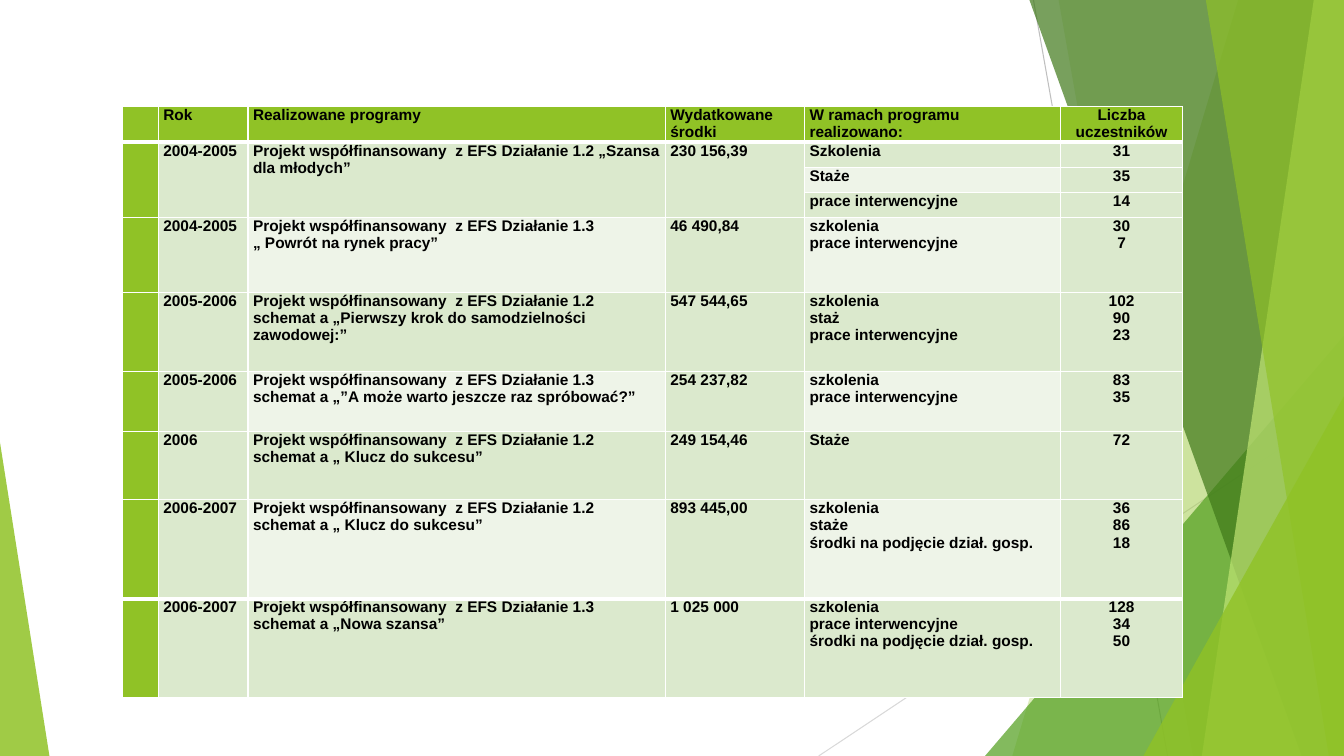
from dataclasses import dataclass

from lxml import etree
from pptx import Presentation
from pptx import util as u
from pptx.dml import color
from pptx.enum import shapes, text
from pptx.oxml import ns

GREEN, PALE, PALER = "90C226", "DBE9CD", "EEF4E8"
WHITE, BLACK = "FFFFFF", "000000"
COLUMN_WIDTHS = (0.36, 0.89, 4.14, 1.38, 2.54, 1.21)
BANDED_COLUMNS = (2, 4)
COUNT_COLUMN = 5
MERGED_ROWS = (1, 3)


@dataclass(frozen=True)
class Ray:
    start: tuple[float, float]
    end: tuple[float, float]
    tone: str


@dataclass(frozen=True)
class Blade:
    points: tuple[tuple[float, float], ...]
    tone: str
    opacity: int


@dataclass(frozen=True)
class Corner:
    box: tuple[float, float, float, float]
    apex: int
    tone: str
    opacity: int


@dataclass(frozen=True)
class Programme:
    height: float
    year: str = ""
    title: str = ""
    funds: str = ""
    activities: str = ""
    participants: str = ""


RAYS = (
    Ray((10.25, 0), (11.58, 7.5), "BFBFBF"),
    Ray((13.33, 4.03), (8.12, 7.5), "D9D9D9"),
)


def blade(top: float, bottom: float, tone: str, opacity: int) -> Blade:
    return Blade(((top, 0), (13.33, 0), (13.33, 7.5), (bottom, 7.5)), tone, opacity)


DECORATION = (
    blade(12.28, 10.04, GREEN, 30),
    blade(10.5, 11.83, GREEN, 20),
    Corner((9.77, 3.33, 3.56, 4.17), 1, "54A021", 72),
    blade(10.21, 12.91, "3F7819", 70),
    blade(13.03, 11.92, "C0E474", 70),
    blade(11.96, 13.18, GREEN, 65),
    Corner((11.34, 3.93, 1.99, 3.57), 1, GREEN, 80),
    Corner((0, 4.39, 0.49, 3.11), 0, GREEN, 85),
)

PROJECT = "Projekt współfinansowany  z EFS Działanie "
PROGRAMMES = (
    Programme(0.35, "Rok", "Realizowane programy", "Wydatkowane środki",
              "W ramach programu realizowano:", "Liczba uczestników"),
    Programme(0.25, "2004-2005", PROJECT + "1.2 „Szansa dla młodych”",
              "230 156,39", "Szkolenia", "31"),
    Programme(0.25, activities="Staże", participants="35"),
    Programme(0.25, activities="prace interwencyjne", participants="14"),
    Programme(0.74, "2004-2005", PROJECT + "1.3 „ Powrót na rynek pracy”",
              "46 490,84", "szkolenia\nprace interwencyjne", "30\n7"),
    Programme(0.79, "2005-2006",
              PROJECT + "1.2 schemat a „Pierwszy krok do samodzielności zawodowej:”",
              "547 544,65", "szkolenia\nstaż\nprace interwencyjne", "102\n90\n23"),
    Programme(0.59, "2005-2006",
              PROJECT + "1.3 schemat a „”A może warto jeszcze raz spróbować?”",
              "254 237,82", "szkolenia\nprace interwencyjne", "83\n35"),
    Programme(0.68, "2006", PROJECT + "1.2 schemat a „ Klucz do sukcesu”",
              "249 154,46", "Staże", "72"),
    Programme(0.98, "2006-2007", PROJECT + "1.2 schemat a „ Klucz do sukcesu”",
              "893 445,00", "szkolenia\nstaże\nśrodki na podjęcie dział. gosp.",
              "36\n86\n18"),
    Programme(0.98, "2006-2007", PROJECT + "1.3 schemat a „Nowa szansa”",
              "1 025 000",
              "szkolenia\nprace interwencyjne\nśrodki na podjęcie dział. gosp.",
              "128\n34\n50"),
)


def paint(fill, tone: str, opacity: int = 100) -> None:
    fill.solid()
    fill.fore_color.rgb = color.RGBColor.from_string(tone)
    if opacity < 100:
        solid = fill._xPr.find(ns.qn("a:solidFill"))
        etree.SubElement(solid[0], ns.qn("a:alpha"), val=str(opacity * 1000))


def draw_ray(slide, ray: Ray) -> None:
    line = slide.shapes.add_connector(
        shapes.MSO_CONNECTOR.STRAIGHT,
        *(u.Inches(value) for value in ray.start + ray.end))
    paint(line.line.fill, ray.tone)
    line.line.width = u.Pt(0.75)
    etree.SubElement(line._element.spPr, ns.qn("a:effectLst"))


def draw_decoration(slide, part: Blade | Corner) -> None:
    if isinstance(part, Blade):
        points = [(u.Inches(x), u.Inches(y)) for x, y in part.points]
        builder = slide.shapes.build_freeform(*points[0], scale=1.0)
        builder.add_line_segments(points[1:], close=True)
        shape = builder.convert_to_shape()
    else:
        shape = slide.shapes.add_shape(
            shapes.MSO_SHAPE.ISOSCELES_TRIANGLE,
            *(u.Inches(value) for value in part.box))
        shape.adjustments[0] = part.apex
    shape.shadow.inherit = False
    shape.line.fill.background()
    paint(shape.fill, part.tone, part.opacity)


def write(frame, words: str, *, size: float = 11, bold: bool = True,
          tone: str = BLACK, face: str = "Arial", centred: bool = False) -> None:
    frame.word_wrap = True
    for index, words_line in enumerate(words.split("\n")):
        paragraph = frame.add_paragraph() if index else frame.paragraphs[0]
        paragraph.alignment = text.PP_ALIGN.CENTER if centred else text.PP_ALIGN.LEFT
        if not words_line:
            paragraph._p.get_or_add_endParaRPr().set("sz", str(size * 100))
            continue
        run = paragraph.add_run()
        run.text = words_line
        run.font.size, run.font.bold, run.font.name = u.Pt(size), bold, face
        run.font.color.rgb = color.RGBColor.from_string(tone)


def add_borders(cell, top: float, bottom: float) -> None:
    properties = cell._tc.get_or_add_tcPr()
    for side, width in (("L", 1), ("R", 1), ("T", top), ("B", bottom)):
        border = etree.SubElement(properties, ns.qn("a:ln" + side), w=str(u.Pt(width)))
        solid = etree.SubElement(border, ns.qn("a:solidFill"))
        etree.SubElement(solid, ns.qn("a:srgbClr"), val=WHITE)


def cell_tone(row: int, column: int) -> str:
    if row == 0 or column == 0:
        return GREEN
    return PALER if column in BANDED_COLUMNS and row % 2 == 0 else PALE


def draw_programmes(slide) -> None:
    last = len(PROGRAMMES) - 1
    table = slide.shapes.add_table(
        len(PROGRAMMES), len(COLUMN_WIDTHS), u.Inches(1.21), u.Inches(1.06),
        u.Inches(sum(COLUMN_WIDTHS)),
        u.Inches(sum(item.height for item in PROGRAMMES))).table
    table.first_row = table.horz_banding = False
    for column, width in zip(table.columns, COLUMN_WIDTHS):
        column.width = u.Inches(width)
    for row, item in enumerate(PROGRAMMES):
        table.rows[row].height = u.Inches(item.height)
        entries = ("", item.year, item.title, item.funds,
                   item.activities, item.participants)
        for column, words in enumerate(entries):
            cell = table.cell(row, column)
            cell.margin_left = cell.margin_right = u.Inches(0.05)
            cell.margin_top = cell.margin_bottom = 0
            add_borders(cell, 3 if row in (1, last) else 1,
                        3 if row in (0, last - 1) else 1)
            paint(cell.fill, cell_tone(row, column))
            write(cell.text_frame, words, centred=column == COUNT_COLUMN)
    first, final = MERGED_ROWS
    for column in range(BANDED_COLUMNS[1]):
        table.cell(first, column).merge(table.cell(final, column))


def main() -> None:
    deck = Presentation()
    deck.slide_width, deck.slide_height = u.Inches(13.33), u.Inches(7.5)
    slide = deck.slides.add_slide(deck.slide_layouts[6])
    paint(slide.background.fill, WHITE)
    for ray in RAYS:
        draw_ray(slide, ray)
    for part in DECORATION:
        draw_decoration(slide, part)
    draw_programmes(slide)
    deck.save("out.pptx")


if __name__ == "__main__":
    main()
